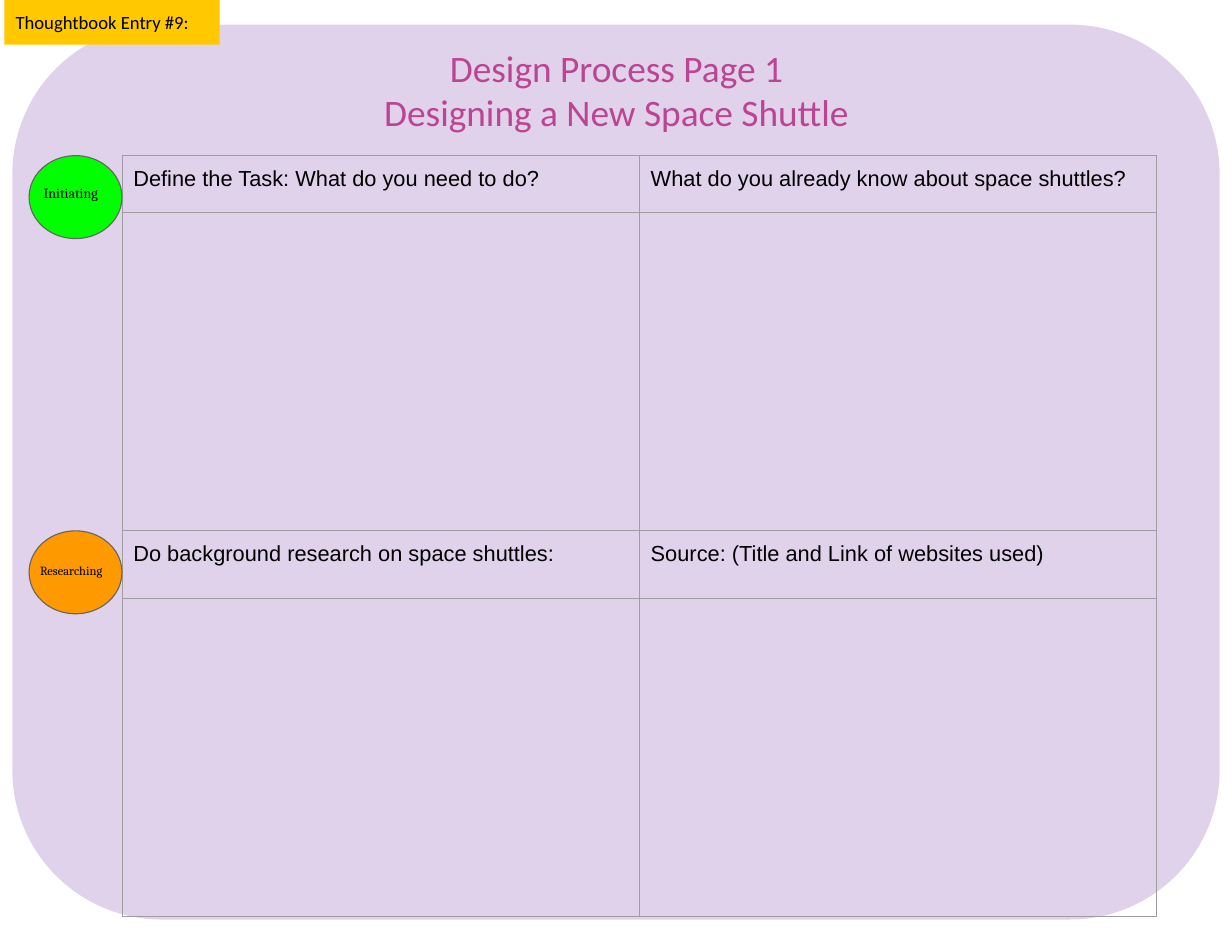
from lxml.etree import SubElement
from pptx import Presentation
from pptx.dml.color import RGBColor
from pptx.enum.shapes import MSO_SHAPE
from pptx.enum.text import MSO_ANCHOR, PP_ALIGN
from pptx.oxml.ns import qn
from pptx.util import Inches, Pt

COLORS = {
    "panel": "E1D2EC",
    "title": "BB4592",
    "text": "000000",
    "grid": "9E9E9E",
    "outline": "666666",
    "initiating": "00FF00",
    "researching": "FF9900",
    "label": "FFC800",
}


def color(name):
    return RGBColor.from_string(COLORS[name])


def write(frame, text, font="Arial", size=14, fill="text", align=PP_ALIGN.LEFT,
          anchor=MSO_ANCHOR.TOP, inset=0.1, left_inset=None):
    """Fill a text frame, one paragraph for each line of text."""
    frame.word_wrap = True
    frame.vertical_anchor = anchor
    frame.margin_left = Inches(inset if left_inset is None else left_inset)
    frame.margin_top = frame.margin_right = frame.margin_bottom = Inches(inset)
    for index, line in enumerate(text.split("\n")):
        paragraph = frame.add_paragraph() if index else frame.paragraphs[0]
        paragraph.alignment = align
        run = paragraph.add_run()
        run.text = line
        run.font.name = font
        run.font.size = Pt(size)
        run.font.color.rgb = color(fill)


class Worksheet:
    """Draws worksheet elements on one slide in a shared style."""

    line_width = Pt(0.75)

    def __init__(self, slide):
        self.slide = slide

    def shape(self, kind, left, top, width, height, fill, line=None, shapes=None):
        shapes = self.slide.shapes if shapes is None else shapes
        shape = shapes.add_shape(kind, Inches(left), Inches(top), Inches(width), Inches(height))
        shape.shadow.inherit = False
        shape.fill.solid()
        shape.fill.fore_color.rgb = color(fill)
        if line:
            shape.line.color.rgb = color(line)
            shape.line.width = self.line_width
        else:
            shape.line.fill.background()
        return shape

    def text(self, text, left, top, width, height, shapes=None, **style):
        shapes = self.slide.shapes if shapes is None else shapes
        box = shapes.add_textbox(Inches(left), Inches(top), Inches(width), Inches(height))
        write(box.text_frame, text, **style)

    def badge(self, text, top, text_top, fill, **style):
        """Group an ellipse with the name of a design stage."""
        shapes = self.slide.shapes.add_group_shape().shapes
        self.shape(MSO_SHAPE.OVAL, 0.26, top, 0.83, 0.74, fill, "outline", shapes)
        self.text(text, 0.26, text_top, 0.83, 0.3, shapes, font="Cambria", **style)

    def border(self, cell):
        properties = cell._tc.get_or_add_tcPr()
        for side in ("a:lnL", "a:lnR", "a:lnT", "a:lnB"):
            line = SubElement(properties, qn(side), w=str(self.line_width))
            solid = SubElement(line, qn("a:solidFill"))
            SubElement(solid, qn("a:srgbClr"), val=COLORS["grid"])

    def table(self, rows, heights, left, top, column_width):
        columns = len(rows[0])
        frame = self.slide.shapes.add_table(
            len(rows), columns, Inches(left), Inches(top),
            Inches(column_width * columns), Inches(sum(heights)))
        table = frame.table
        table.first_row = table.horz_banding = False
        for column in table.columns:
            column.width = Inches(column_width)
        for row, height, texts in zip(table.rows, heights, rows):
            row.height = Inches(height)
            for cell, text in zip(row.cells, texts):
                self.border(cell)
                cell.fill.background()
                cell.margin_left = cell.margin_right = Inches(0.1)
                cell.margin_top = cell.margin_bottom = Inches(0.1)
                if text:
                    write(cell.text_frame, text)


def main():
    presentation = Presentation()
    presentation.slide_width = Inches(11)
    presentation.slide_height = Inches(8.5)
    worksheet = Worksheet(presentation.slides.add_slide(presentation.slide_layouts[6]))

    panel = worksheet.shape(MSO_SHAPE.ROUNDED_RECTANGLE, 0.11, 0.22, 10.78, 7.99, "panel")
    panel.adjustments[0] = 0.167
    worksheet.text("Design Process Page 1\nDesigning a New Space Shuttle",
                   0.12, 0.26, 10.77, 1.06, font="Calibri", size=24, fill="title",
                   align=PP_ALIGN.CENTER, anchor=MSO_ANCHOR.BOTTOM, inset=0.12)
    worksheet.table(
        [("Define the Task: What do you need to do?",
          "What do you already know about space shuttles?"),
         ("", ""),
         ("Do background research on space shuttles:",
          "Source: (Title and Link of websites used)"),
         ("", "")],
        heights=[0.51, 2.84, 0.6, 2.84], left=1.09, top=1.39, column_width=4.62)
    worksheet.badge("Researching", 4.74, 4.96, "researching", size=8)
    worksheet.badge("Initiating", 1.39, 1.57, "initiating", size=9, left_inset=0.13)
    label = worksheet.shape(MSO_SHAPE.RECTANGLE, 0.04, 0, 1.92, 0.4, "label")
    write(label.text_frame, "Thoughtbook Entry #9:", font="Calibri", size=12)

    presentation.save("out.pptx")


if __name__ == "__main__":
    main()
